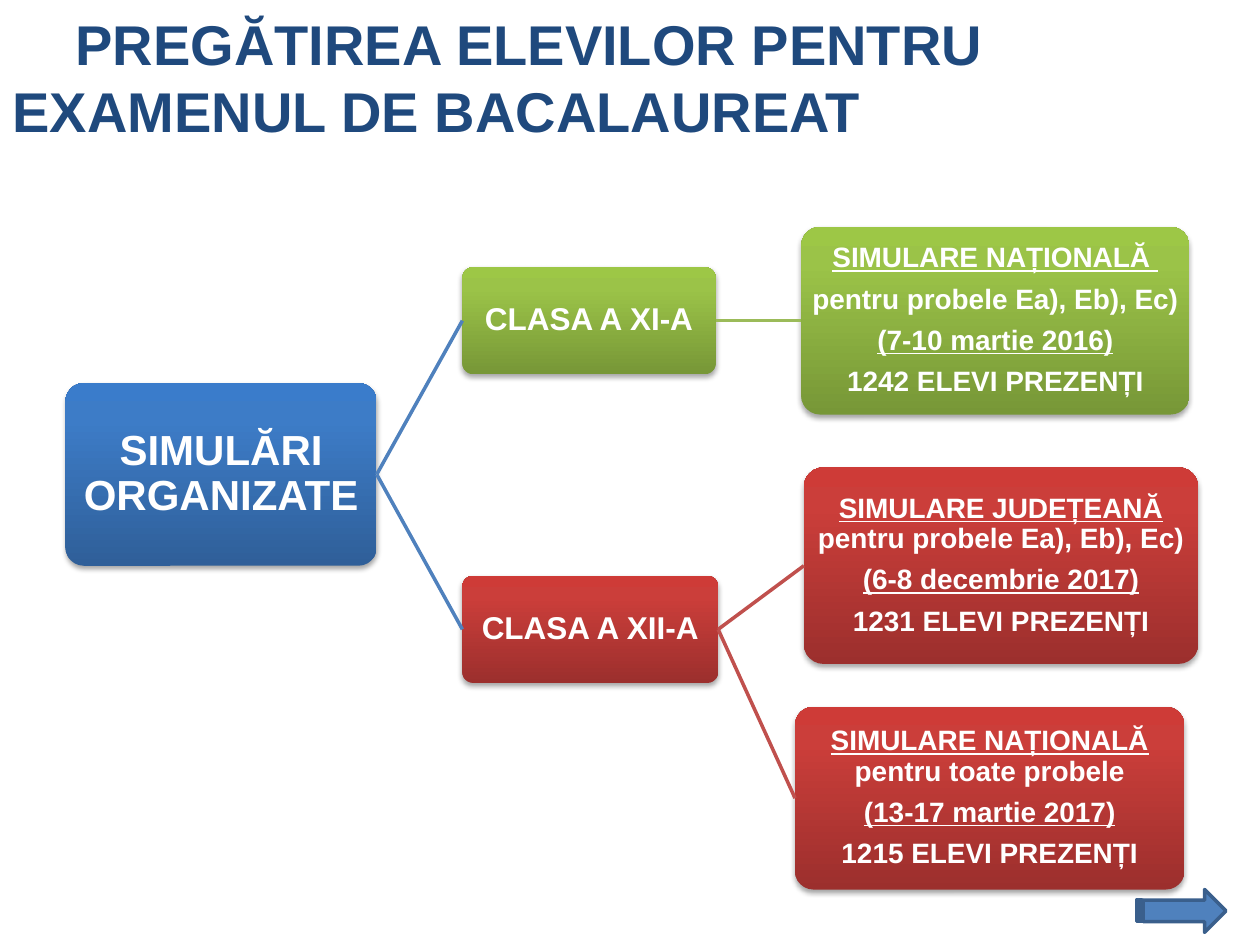
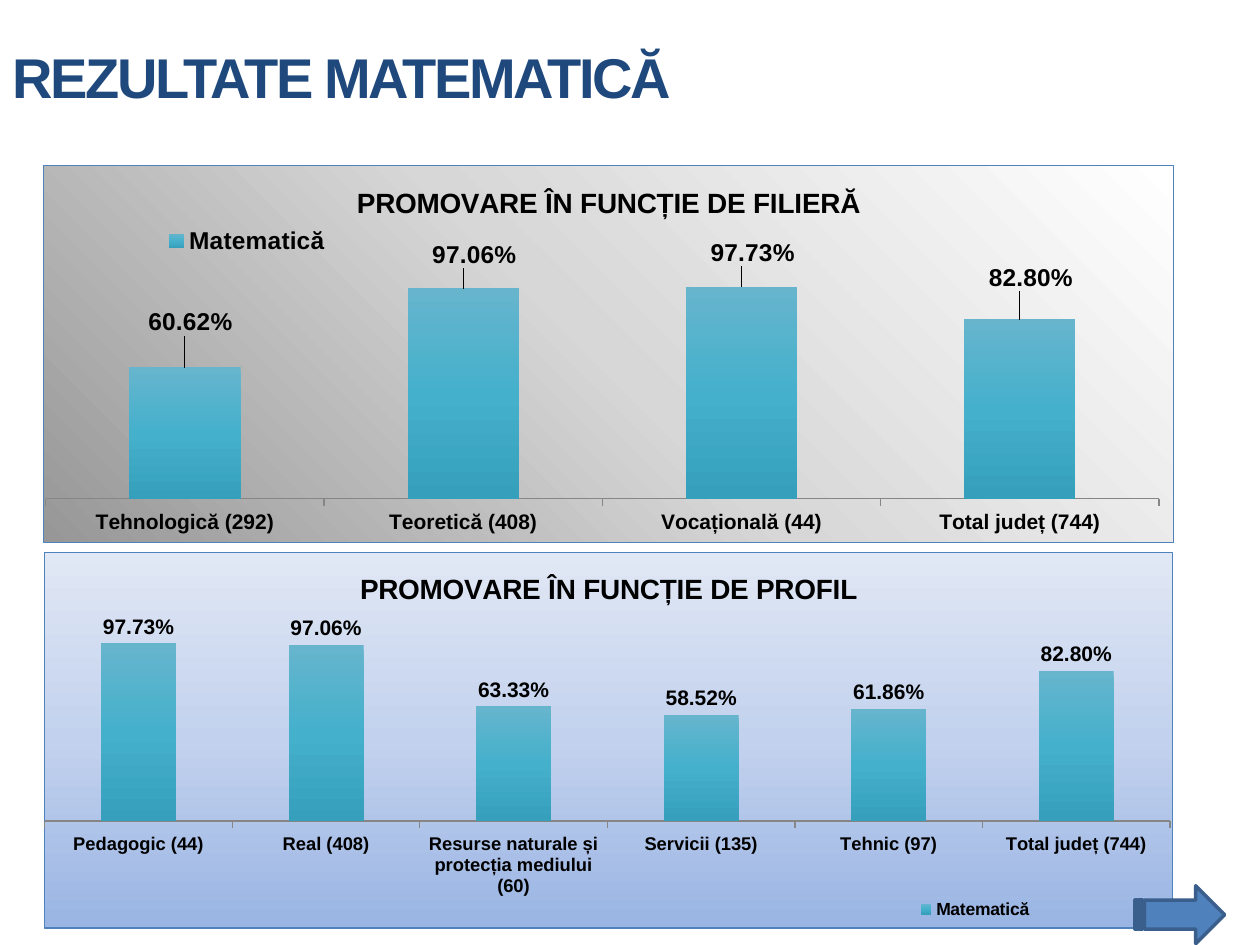
from pptx import Presentation
from pptx import util as u
from pptx.chart.data import CategoryChartData
from pptx.dml.color import RGBColor
from pptx.enum import chart as charts, shapes, text
from pptx.oxml import parse_xml
from pptx.oxml.ns import nsdecls, qn

# Shared colours and formats
NAVY = RGBColor(0x1F, 0x49, 0x7D)
BLUE = RGBColor(0x4F, 0x81, 0xBD)
DARK_BLUE = RGBColor(0x3A, 0x5F, 0x8C)
GREEN = RGBColor(0x9B, 0xBB, 0x59)
RED = RGBColor(0xC0, 0x50, 0x4D)
GREY = RGBColor(0x86, 0x86, 0x86)
WHITE = RGBColor(0xFF, 0xFF, 0xFF)
BLACK = RGBColor(0, 0, 0)

BLUE_STOPS = [(0, "2F5F99"), (80, "3D7CC7"), (100, "3A7CCB")]
GREEN_STOPS = [(0, "779737"), (80, "9BC348"), (100, "9DC746")]
RED_STOPS = [(0, "9C2F2D"), (80, "CB3E3A"), (100, "CE3B37")]
BAR_STOPS = [(0, "66B5CD"), (50, "45B0CC"), (100, "36A0BC")]
SILVER_STOPS = [(0, "979797"), (50, "D7D7D7"), (100, "FFFFFF")]
SKY_STOPS = [(0, "9AB5E4"), (50, "C2D1ED"), (100, "E1E8F5")]

TITLE_FONT = {"name": "Arial", "size": u.Pt(32), "bold": True}
BOX_FONT = {"name": "Arial", "bold": True}
CHART_FONT = {"name": "Arial", "bold": True}
SHADOW = (
    f'<a:outerShdw {nsdecls("a")} blurRad="39370" dist="22860" dir="5400000" '
    'rotWithShape="0"><a:srgbClr val="000000"><a:alpha val="35000"/>'
    '</a:srgbClr></a:outerShdw>'
)


def apply_format(target, values):
    for name, value in values.items():
        if name == "color":
            target.color.rgb = value
        else:
            setattr(target, name, value)


def gradient(stops, angle):
    stop_xml = "".join(
        f'<a:gs pos="{position * 1000}"><a:srgbClr val="{color}"/></a:gs>'
        for position, color in stops
    )
    return parse_xml(
        f'<a:gradFill {nsdecls("a")} rotWithShape="1"><a:gsLst>{stop_xml}</a:gsLst>'
        f'<a:lin ang="{angle * 60000}" scaled="0"/></a:gradFill>'
    )


presentation = Presentation()
presentation.slide_width = u.Inches(10)
presentation.slide_height = u.Inches(7.5)

# Both slides with their titles
titles = ["PREGĂTIREA ELEVILOR PENTRU\vEXAMENUL DE BACALAUREAT", "REZULTATE MATEMATICĂ"]
slides = []
for words in titles:
    slide = presentation.slides.add_slide(presentation.slide_layouts[5])
    title = slide.shapes.title
    apply_format(title, {
        "left": u.Inches(0), "top": u.Inches(0.02),
        "width": u.Inches(10), "height": u.Inches(1.17),
    })
    title.text_frame.vertical_anchor = text.MSO_ANCHOR.MIDDLE
    title.text_frame.text = words
    paragraph = title.text_frame.paragraphs[0]
    paragraph.alignment = text.PP_ALIGN.LEFT
    for run in paragraph.runs:
        apply_format(run.font, TITLE_FONT | {"color": NAVY})
    slides.append(slide)
diagram_slide, results_slide = slides

first_title = diagram_slide.shapes.title.text_frame.paragraphs[0]
first_title._p.get_or_add_pPr().set("indent", str(u.Inches(0.5)))
results_run = results_slide.shapes.title.text_frame.paragraphs[0].runs[0]
results_run.font._element.set("spc", "-140")

# Diagram boxes: position, gradient, size, paragraphs of (words, underlined)
boxes = {
    "root": ((0.52, 3.04, 2.47, 1.45), BLUE_STOPS, 24, [[("SIMULĂRI ORGANIZATE", False)]]),
    "class 11": ((3.67, 2.12, 2.01, 0.85), GREEN_STOPS, 18, [[("CLASA A XI-A", False)]]),
    "class 12": ((3.67, 4.57, 2.03, 0.85), RED_STOPS, 18, [[("CLASA A XII-A", False)]]),
    "national 11": ((6.36, 1.8, 3.08, 1.49), GREEN_STOPS, 16, [
        [("SIMULARE NAȚIONALĂ ", True)],
        [("pentru probele Ea), Eb), Ec)", False)],
        [("(7-10 martie 2016)", True)],
        [("1242 ELEVI PREZENȚI", False)],
    ]),
    "county 12": ((6.38, 3.71, 3.13, 1.56), RED_STOPS, 16, [
        [("SIMULARE JUDEȚEANĂ ", True), ("pentru probele Ea), Eb), Ec)", False)],
        [("(6-8 decembrie 2017)", True)],
        [("1231 ELEVI PREZENȚI", False)],
    ]),
    "national 12": ((6.31, 5.61, 3.09, 1.45), RED_STOPS, 16, [
        [("SIMULARE NAȚIONALĂ ", True), ("pentru toate probele", False)],
        [("(13-17 martie 2017)", True)],
        [("1215 ELEVI PREZENȚI", False)],
    ]),
}
box_shapes = {}
for name, (place, stops, size, paragraphs) in boxes.items():
    shape = diagram_slide.shapes.add_shape(
        shapes.MSO_SHAPE.ROUNDED_RECTANGLE, *map(u.Inches, place))
    shape.adjustments[0] = 0.1
    properties = shape._element.spPr
    shape.fill.solid()
    properties.replace(properties.find(qn("a:solidFill")), gradient(stops, 270))
    shape.line.fill.background()
    shape.shadow.inherit = False
    properties.find(qn("a:effectLst")).append(parse_xml(SHADOW))
    frame = shape.text_frame
    apply_format(frame, {
        "word_wrap": True, "vertical_anchor": text.MSO_ANCHOR.MIDDLE,
        "margin_left": u.Inches(0.02), "margin_right": u.Inches(0.02),
        "margin_top": u.Inches(0.02), "margin_bottom": u.Inches(0.02),
    })
    for index, parts in enumerate(paragraphs):
        paragraph = frame.add_paragraph() if index else frame.paragraphs[0]
        apply_format(paragraph, {"alignment": text.PP_ALIGN.CENTER, "line_spacing": 0.9})
        if index:
            paragraph.space_before = u.Pt(6.3)
        for words, underlined in parts:
            run = paragraph.add_run()
            run.text = words
            apply_format(run.font, BOX_FONT | {
                "size": u.Pt(size), "color": WHITE, "underline": underlined})
    box_shapes[name] = shape

# Branches from the right side of one box to the left side of the next
branches = [
    ("root", "class 11", BLUE), ("root", "class 12", BLUE),
    ("class 11", "national 11", GREEN),
    ("class 12", "county 12", RED), ("class 12", "national 12", RED),
]
for start, end, color in branches:
    connector = diagram_slide.shapes.add_connector(shapes.MSO_CONNECTOR.STRAIGHT, 0, 0, 0, 0)
    connector.begin_connect(box_shapes[start], 3)
    connector.end_connect(box_shapes[end], 1)
    apply_format(connector.line, {"color": color, "width": u.Pt(2)})
    connector._element.spPr.append(parse_xml(f'<a:effectLst {nsdecls("a")}/>'))

# Charts on the results slide
chart_specs = [
    {
        "title": "PROMOVARE ÎN FUNCȚIE DE FILIERĂ",
        "place": (0.34, 1.31, 8.98, 3),
        "values": {"Tehnologică (292)": 0.6062, "Teoretică (408)": 0.9706,
                   "Vocațională (44)": 0.9773, "Total județ (744)": 0.828},
        "background": (SILVER_STOPS, 315),
        "sizes": {"axis": 12, "legend": 14, "label": 14},
        "plot": (0.002, 0.194, 0.985, 0.69),
        "legend": (0.1, 0.16, 0.16, 0.08),
        "label_offsets": [(0.005, -0.07), (0.01, -0.04), (0.01, -0.04), (0.01, -0.06)],
    },
    {
        "title": "PROMOVARE ÎN FUNCȚIE DE PROFIL",
        "place": (0.35, 4.38, 8.96, 2.99),
        "values": {"Pedagogic (44)": 0.9773, "Real (408)": 0.9706,
                   "Resurse naturale și protecția mediului (60)": 0.6333,
                   "Servicii (135)": 0.5852, "Tehnic (97)": 0.6186,
                   "Total județ (744)": 0.828},
        "background": (SKY_STOPS, 270),
        "sizes": {"axis": 10.5, "legend": 10, "label": 12},
        "plot": (0, 0.135, 0.998, 0.58),
        "legend": (0.77, 0.92, 0.11, 0.06),
        "label_offsets": [],
    },
]
for chart_spec in chart_specs:
    sizes = chart_spec["sizes"]
    data = CategoryChartData(number_format="0.00%")
    data.categories = list(chart_spec["values"])
    data.add_series("Matematică", list(chart_spec["values"].values()))
    chart = results_slide.shapes.add_chart(
        charts.XL_CHART_TYPE.COLUMN_CLUSTERED,
        *map(u.Inches, chart_spec["place"]), data).chart
    apply_format(chart.font, CHART_FONT | {"size": u.Pt(sizes["axis"]), "color": BLACK})

    # Title, legend and axes
    chart.has_title = True
    chart.chart_title.text_frame.text = chart_spec["title"]
    title_run = chart.chart_title.text_frame.paragraphs[0].runs[0]
    apply_format(title_run.font, CHART_FONT | {"size": u.Pt(16), "color": BLACK})
    chart.has_legend = True
    legend = chart.legend
    apply_format(legend, {
        "position": charts.XL_LEGEND_POSITION.RIGHT, "include_in_layout": False})
    apply_format(legend.font, CHART_FONT | {"size": u.Pt(sizes["legend"]), "color": BLACK})
    apply_format(chart.value_axis, {
        "minimum_scale": 0, "maximum_scale": 1.2,
        "has_major_gridlines": False, "visible": False})
    axis = chart.category_axis
    axis.major_tick_mark = charts.XL_TICK_MARK.OUTSIDE
    axis.tick_labels.font.size = u.Pt(sizes["axis"])
    axis.tick_labels.font.bold = True
    apply_format(axis.format.line, {"color": GREY, "width": u.Pt(0.75)})

    # Bars and their labels
    plot = chart.plots[0]
    apply_format(plot, {"gap_width": 150, "vary_by_categories": False})
    series = plot.series[0]
    series.format.fill.solid()
    bar_properties = series._element.find(qn("c:spPr"))
    bar_properties.replace(bar_properties.find(qn("a:solidFill")), gradient(BAR_STOPS, 90))
    label_font = CHART_FONT | {"size": u.Pt(sizes["label"]), "color": BLACK}
    labels = series.data_labels
    apply_format(labels, {
        "show_value": True, "number_format": "0.00%", "number_format_is_linked": False,
        "position": charts.XL_LABEL_POSITION.OUTSIDE_END})
    apply_format(labels.font, label_font)
    for index in range(len(chart_spec["label_offsets"])):
        label = series.points[index].data_label
        apply_format(label.font, label_font)
        label.position = charts.XL_LABEL_POSITION.OUTSIDE_END

    # Manual places of plot, legend and moved labels
    placements = [(chart._chartSpace.chart.plotArea, 0, chart_spec["plot"]),
                  (legend._element, 1, chart_spec["legend"])]
    moved_labels = list(series._element.iter(qn("c:dLbl")))
    for label_element, offset in zip(moved_labels, chart_spec["label_offsets"]):
        label_element.insert(1, parse_xml(
            f'<c:numFmt {nsdecls("c")} formatCode="0.00%" sourceLinked="0"/>'))
        placements.append((label_element, 1, offset))
    for parent, index, numbers in placements:
        for old_layout in parent.findall(qn("c:layout")):
            parent.remove(old_layout)
        inner = '<c:layoutTarget val="inner"/>' if index == 0 else ""
        modes = "" if len(numbers) == 2 else '<c:xMode val="edge"/><c:yMode val="edge"/>'
        fields = "".join(f'<c:{tag} val="{number}"/>' for tag, number in zip("xywh", numbers))
        parent.insert(index, parse_xml(
            f'<c:layout {nsdecls("c")}><c:manualLayout>{inner}{modes}{fields}'
            '</c:manualLayout></c:layout>'))

    # Chart background and border
    area = parse_xml(
        f'<c:spPr {nsdecls("c", "a")}><a:ln w="9525"><a:solidFill>'
        f'<a:srgbClr val="{BLUE}"/></a:solidFill></a:ln></c:spPr>')
    area.insert(0, gradient(*chart_spec["background"]))
    chart._chartSpace.chart.addnext(area)

# Arrow to the next slide
arrows = [(diagram_slide, (9.02, 7.06, 0.71, 0.34)), (results_slide, (9.01, 7.03, 0.71, 0.46))]
for slide, place in arrows:
    arrow = slide.shapes.add_shape(
        shapes.MSO_SHAPE.STRIPED_RIGHT_ARROW, *map(u.Inches, place))
    arrow.shadow.inherit = False
    arrow.fill.solid()
    arrow.fill.fore_color.rgb = BLUE
    apply_format(arrow.line, {"color": DARK_BLUE, "width": u.Pt(2)})

presentation.save("out.pptx")
